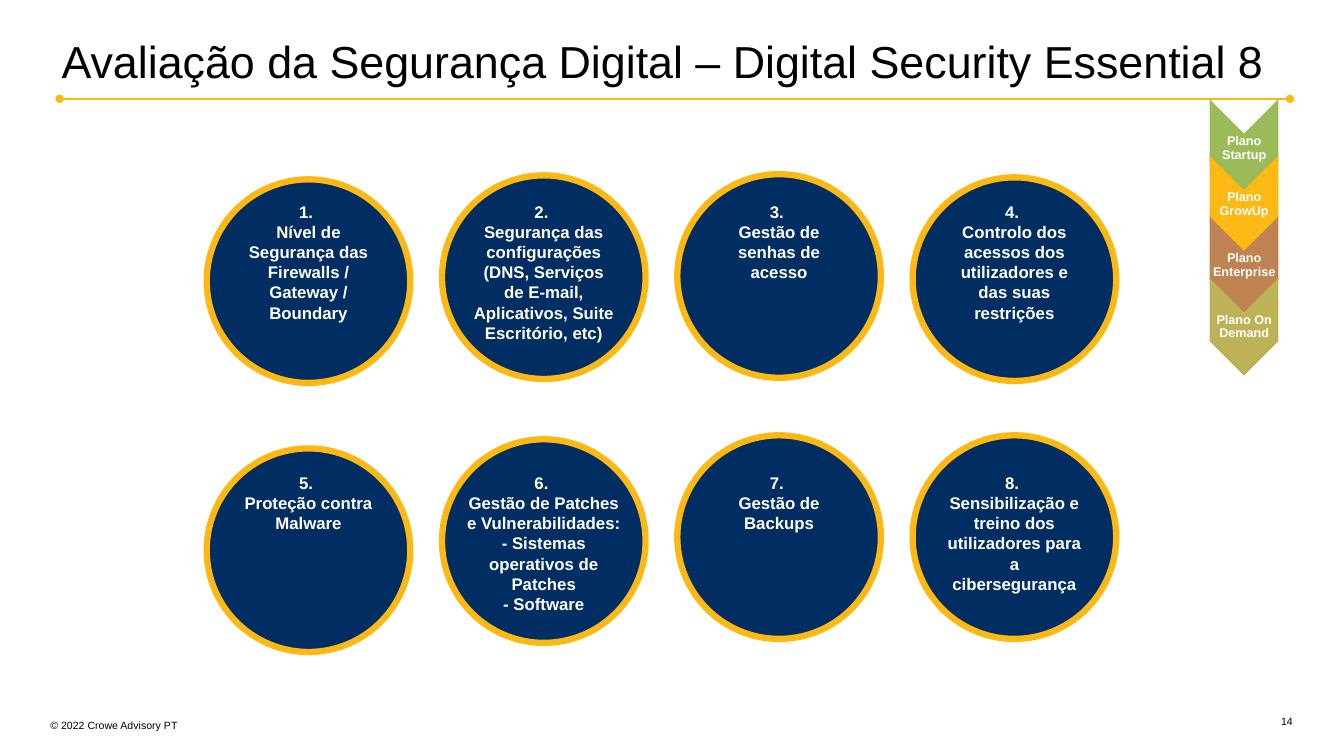
import lxml.etree
import pptx
import pptx.dml.color
import pptx.enum.shapes
import pptx.enum.text
import pptx.oxml.ns
import pptx.util

Cm = pptx.util.Cm
Pt = pptx.util.Pt
RGB = pptx.dml.color.RGBColor
Shape = pptx.enum.shapes.MSO_SHAPE
Align = pptx.enum.text.PP_ALIGN
Anchor = pptx.enum.text.MSO_ANCHOR

BLACK = RGB(0x00, 0x00, 0x00)
WHITE = RGB(0xFF, 0xFF, 0xFF)
NAVY = RGB(0x00, 0x2D, 0x62)
GOLD = RGB(0xFD, 0xB9, 0x13)
GREEN = RGB(0x9B, 0xBB, 0x59)
BROWN = RGB(0xBE, 0x83, 0x51)
OLIVE = RGB(0xBD, 0xB2, 0x55)

LEFT, STEP, SIZE = 5.21, 5.93, 5.13
ROWS = [
    (5.08, [
        (4.52, 3.53, ["1. ", "Nível de Segurança das Firewalls / Gateway / Boundary"]),
        (4.42, 3.53, ["2. ", "Segurança das configurações (DNS, Serviços de E-mail, "
                             "Aplicativos, Suite Escritório, etc)"]),
        (4.39, 3.53, ["3. ", "Gestão de senhas de acesso"]),
        (4.47, 3.53, ["4. ", "Controlo dos acessos dos utilizadores e das suas restrições"]),
    ]),
    (11.91, [
        (11.3, 3.53, ["5. ", "Proteção contra Malware"]),
        (11.07, 3.99, ["6. ", "Gestão de Patches e Vulnerabilidades:\n"
                              "- Sistemas operativos de Patches", "- Software"]),
        (10.97, 3.53, ["7. ", "Gestão de\nBackups"]),
        (10.97, 3.53, ["8. ", "Sensibilização e treino dos utilizadores para a\ncibersegurança"]),
    ]),
]
PLANS = [
    (2.87, GREEN, "Plano Startup"),
    (4.29, GOLD, "Plano GrowUp"),
    (5.82, BROWN, "Plano Enterprise"),
    (7.37, OLIVE, "Plano On Demand"),
]


class Deck:
    """Holds the text style and the current slide."""

    def __init__(self, font):
        self.font = font
        self.file = pptx.Presentation()
        self.file.slide_width = Cm(33.87)
        self.file.slide_height = Cm(19.05)
        self.slide = self.file.slides.add_slide(self.file.slide_layouts[5])

    def fill_in(self, frame, paras, size, color, align, bold=False, lead=None):
        """Fill a text frame run by run."""
        frame.margin_left = frame.margin_right = 0
        frame.margin_top = frame.margin_bottom = 0
        for i, text in enumerate(paras):
            para = frame.add_paragraph() if i else frame.paragraphs[0]
            para.alignment = align
            if lead:
                para.line_spacing = lead
            for j, line in enumerate(text.split("\n")):
                if j:
                    para.add_line_break()
                run = para.add_run()
                run.text = line
                run.font.name = self.font
                run.font.size = Pt(size)
                run.font.bold = bold
                run.font.color.rgb = color

    def title(self, text, x, y, w, h):
        """Place and fill the title."""
        box = self.slide.shapes.title
        box.left, box.top, box.width, box.height = Cm(x), Cm(y), Cm(w), Cm(h)
        frame = box.text_frame
        frame.auto_size = pptx.enum.text.MSO_AUTO_SIZE.NONE
        frame.vertical_anchor = Anchor.TOP
        frame.word_wrap = True
        self.fill_in(frame, [text], 32, BLACK, Align.LEFT)

    def rule(self, x, y, end):
        """Draw a level line with round ends."""
        line = self.slide.shapes.add_connector(
            pptx.enum.shapes.MSO_CONNECTOR.STRAIGHT, Cm(x), Cm(y), Cm(end), Cm(y))
        line.line.color.rgb = GOLD
        line.line.width = Pt(1)
        name = pptx.oxml.ns.qn
        props = line._element.spPr
        for tip in ("a:headEnd", "a:tailEnd"):
            lxml.etree.SubElement(props.find(name("a:ln")), name(tip), type="oval")
        lxml.etree.SubElement(props, name("a:effectLst"))

    def text(self, paras, x, y, w, h, size, color, align, bold=False,
             lead=None, anchor=Anchor.TOP, home=None):
        """Add a text box to the slide or to a group."""
        box = (home or self.slide).shapes.add_textbox(Cm(x), Cm(y), Cm(w), Cm(h))
        box.text_frame.word_wrap = True
        box.text_frame.vertical_anchor = anchor
        self.fill_in(box.text_frame, paras, size, color, align, bold, lead)

    def shape(self, home, kind, x, y, w, h, fill):
        """Add a plain filled shape to a group."""
        item = home.shapes.add_shape(kind, Cm(x), Cm(y), Cm(w), Cm(h))
        item.shadow.inherit = False
        item.fill.solid()
        item.fill.fore_color.rgb = fill
        item.line.fill.background()
        return item

    def disc(self, x, y, top, wide, paras):
        """Add a ringed circle with its topic."""
        group = self.slide.shapes.add_group_shape()
        ring = self.shape(group, Shape.OVAL, x, y, SIZE, SIZE, NAVY)
        ring.line.color.rgb = GOLD
        ring.line.width = Pt(4.5)
        self.text(paras, x + (SIZE - wide) / 2, top, wide, 3.1, 12, WHITE,
                  Align.CENTER, bold=True, home=group)

    def plan(self, y, fill, label):
        """Add a chevron that points down, with its label."""
        group = self.slide.shapes.add_group_shape()
        self.shape(group, Shape.CHEVRON, 30.12, y, 2.46, 1.73, fill).rotation = 90
        self.text([label], 30.49, y + 0.5, 1.73, 0.74, 9, WHITE, Align.CENTER,
                  bold=True, lead=0.9, anchor=Anchor.MIDDLE, home=group)


def main():
    """Build the slide."""
    deck = Deck("Arial")
    deck.title("Avaliação da Segurança Digital – Digital Security Essential 8",
               1.55, 0.86, 30.99, 2.74)
    deck.rule(1.5, 2.49, 32.51)
    deck.text(["© 2022 Crowe Advisory PT"], 1.27, 18.11, 4, 0.33, 7.5, BLACK, Align.LEFT)
    deck.text(["14"], 31.01, 18.03, 1.57, 0.33, 7.5, BLACK, Align.RIGHT)
    for top, discs in ROWS:
        for col, (y, wide, paras) in enumerate(discs):
            deck.disc(LEFT + col * STEP, y, top, wide, paras)
    for y, fill, label in PLANS:
        deck.plan(y, fill, label)
    deck.file.save("out.pptx")


if __name__ == "__main__":
    main()
